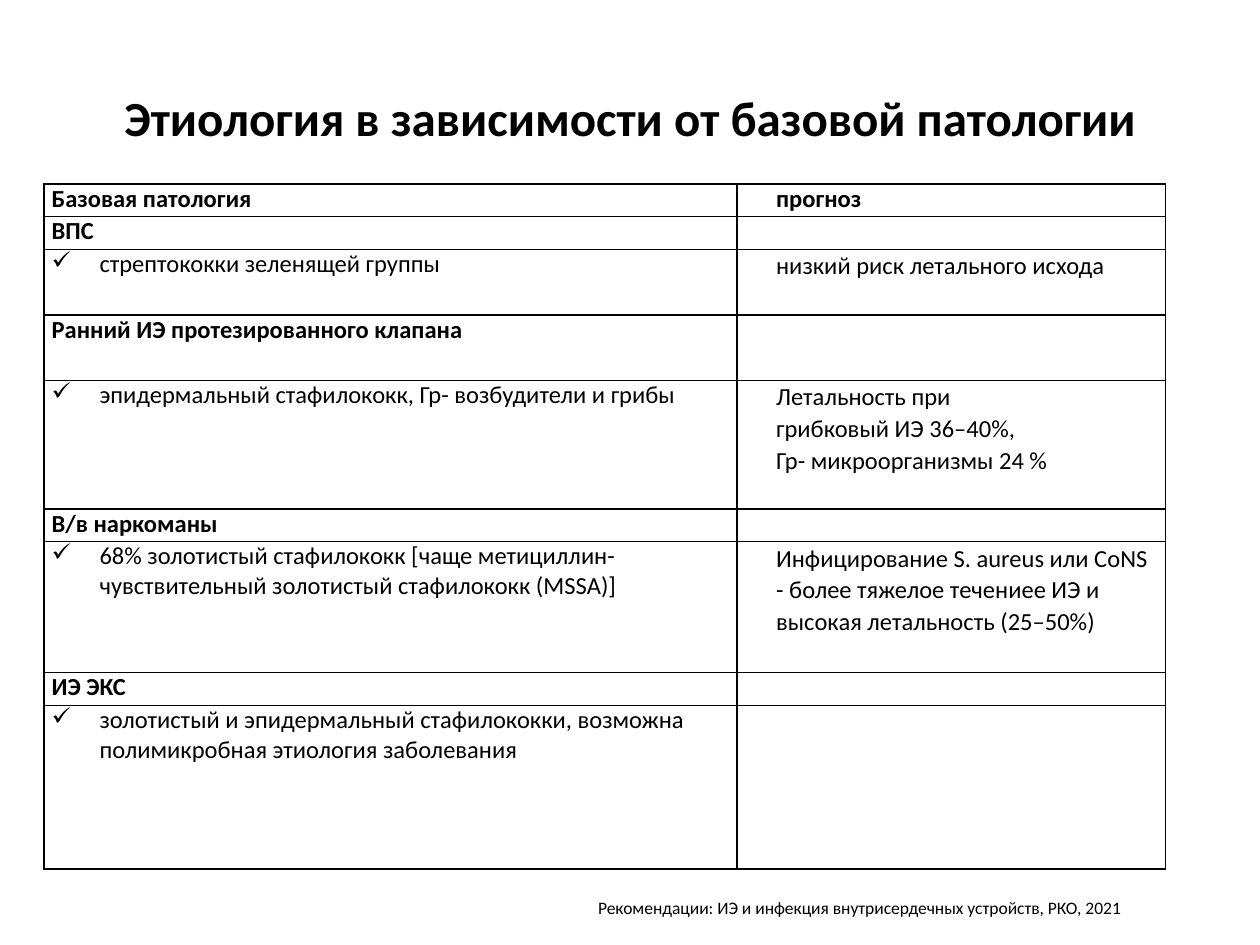
import pptx
import pptx.util
import pptx.dml.color
import pptx.enum.text
import pptx.oxml.ns
from lxml import etree

Inches, Pt = pptx.util.Inches, pptx.util.Pt
qn = pptx.oxml.ns.qn
align = pptx.enum.text.PP_ALIGN
hues = {"ink": "000000", "paper": "FFFFFF"}
ink = pptx.dml.color.RGBColor.from_string(hues["ink"])
paper = pptx.dml.color.RGBColor.from_string(hues["paper"])


def write(para, text, size, bold):
    run = para.add_run()
    run.text = text
    look = {"name": "Calibri", "size": Pt(size), "bold": bold}
    for key, value in look.items():
        setattr(run.font, key, value)
    run.font.color.rgb = ink


def border(cell):
    """Draw a thin line on all four sides of the cell."""
    props = cell._tc.get_or_add_tcPr()
    for side in ("lnL", "lnR", "lnT", "lnB"):
        line = etree.SubElement(props, qn("a:" + side), w=str(Pt(1)))
        fill = etree.SubElement(line, qn("a:solidFill"))
        etree.SubElement(fill, qn("a:srgbClr"), val=hues["ink"])


deck = pptx.Presentation()
deck.slide_width, deck.slide_height = Inches(10), Inches(7.5)
slide = deck.slides.add_slide(deck.slide_layouts[6])

# Title and source note
notes = [
    (0.5, 0.3, "Этиология в зависимости от базовой патологии", 28, True),
    (2.32, 6.58, "Рекомендации: ИЭ и инфекция внутрисердечных устройств, РКО, 2021", 10, False),
]
for left, top, text, size, bold in notes:
    box = slide.shapes.add_textbox(Inches(left), Inches(top), Inches(9), Inches(1.25))
    frame = box.text_frame
    frame.word_wrap = True
    frame.vertical_anchor = pptx.enum.text.MSO_ANCHOR.MIDDLE
    frame.paragraphs[0].alignment = align.CENTER
    write(frame.paragraphs[0], text, size, bold)

# Table: height, heading row or not, pathology, prognosis lines
rows = [
    (0.26, True, "Базовая патология", ["прогноз"]),
    (0.26, True, "ВПС", []),
    (0.52, False, "стрептококки зеленящей группы", ["низкий риск летального исхода"]),
    (0.52, True, "Ранний ИЭ протезированного клапана", []),
    (1.02, False, "эпидермальный стафилококк, Гр- возбудители и грибы",
     ["Летальность при", "грибковый ИЭ 36–40%,", "Гр- микроорганизмы 24 %"]),
    (0.26, True, "В/в наркоманы", []),
    (1.04, False, "68% золотистый стафилококк [чаще метициллин-чувствительный золотистый стафилококк (MSSA)]",
     ["Инфицирование S. aureus или CoNS - более тяжелое течениее ИЭ и высокая летальность (25–50%)"]),
    (0.26, True, "ИЭ ЭКС", []),
    (1.3, False, "золотистый и эпидермальный стафилококки, возможна полимикробная этиология заболевания", []),
]
tall = sum(row[0] for row in rows)
table = slide.shapes.add_table(
    len(rows), 2, Inches(0.35), Inches(1.46), Inches(8.9), Inches(tall)).table
table.first_row = table.horz_banding = False
for col, width in zip(table.columns, (5.5, 3.4)):
    col.width = Inches(width)

inset = {"margin_left": Inches(0.06), "margin_right": Inches(0.06),
         "margin_top": 0, "margin_bottom": 0}
for num, (high, head, cause, lines) in enumerate(rows):
    table.rows[num].height = Inches(high)
    for side, texts in enumerate(([cause], lines)):
        cell = table.cell(num, side)
        for key, value in inset.items():
            setattr(cell, key, value)
        border(cell)
        cell.fill.solid()
        cell.fill.fore_color.rgb = paper
        frame = cell.text_frame
        if not texts:
            # keeps the empty line from stretching a low row
            etree.SubElement(frame.paragraphs[0]._p, qn("a:endParaRPr"), sz="1400")
        for pos, text in enumerate(texts):
            para = frame.add_paragraph() if pos else frame.paragraphs[0]
            if head:
                para.space_before = Pt(4.8)
            elif side:
                para.line_spacing = 1.07
            props = para._p.get_or_add_pPr()
            if side:
                props.set("marL", str(Inches(0.25)))
            elif not head:
                props.set("marL", str(Inches(0.38)))
                props.set("indent", str(-Inches(0.38)))
                etree.SubElement(props, qn("a:buChar"), char="✓")
            write(para, text, 14, head)

deck.save("out.pptx")
